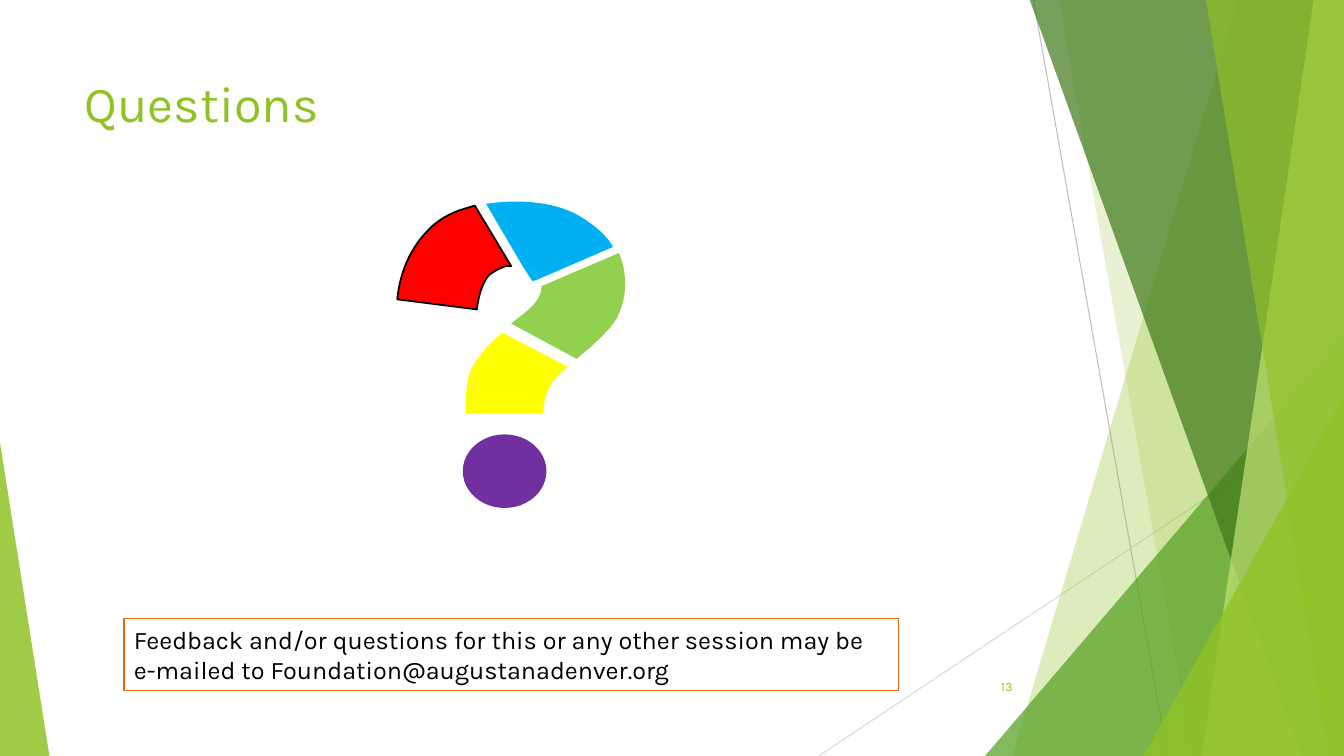
from dataclasses import dataclass

from lxml import etree
from pptx import Presentation
from pptx.dml.color import RGBColor
from pptx.enum.shapes import MSO_CONNECTOR, MSO_SHAPE
from pptx.enum.text import MSO_ANCHOR, MSO_AUTO_SIZE, PP_ALIGN
from pptx.oxml.ns import qn
from pptx.util import Inches, Pt

LINE = MSO_CONNECTOR.STRAIGHT
RECT, OVAL, TRIANGLE = MSO_SHAPE.RECTANGLE, MSO_SHAPE.OVAL, MSO_SHAPE.ISOSCELES_TRIANGLE
TOP, MIDDLE = MSO_ANCHOR.TOP, MSO_ANCHOR.MIDDLE
LEFT, RIGHT = PP_ALIGN.LEFT, PP_ALIGN.RIGHT
GROW = MSO_AUTO_SIZE.SHAPE_TO_FIT_TEXT
W, H = 13.33, 7.5
BAND_TOP = -0.01


@dataclass(frozen=True)
class Theme:
    font: str = "Karla"
    title: int = 36
    body: int = 18
    small: int = 9
    green: str = "90C226"
    mid_green: str = "54A021"
    dark_green: str = "3F7819"
    pale_green: str = "C0E474"
    gray: str = "BFBFBF"
    light_gray: str = "D9D9D9"
    black: str = "000000"
    orange: str = "E76618"
    red: str = "FF0000"
    blue: str = "00B0F0"
    lime: str = "92D050"
    yellow: str = "FFFF00"
    purple: str = "7030A0"


T = Theme()

TITLE = "Questions"
PAGE = "13"
FEEDBACK = ("Feedback and/or questions for this or any other session may be "
            "e-mailed to Foundation@augustanadenver.org")

# start, end, colour
RAYS = [((10.25, 0), (11.58, H), T.gray),
        ((W, 4.03), (8.12, H), T.light_gray)]

# Bands reach the right edge: (top x, bottom x, colour, opacity %)
# Wedges stand on the bottom edge: (left, width, height, apex, colour, opacity %)
DECOR = [
    (12.28, 10.04, T.green, 30),
    (10.5, 11.83, T.green, 20),
    (9.77, 3.56, 4.17, 1, T.mid_green, 72),
    (10.21, 12.91, T.dark_green, 70),
    (13.03, 11.92, T.pale_green, 70),
    (11.96, 13.18, T.green, 65),
    (11.34, 1.99, 3.57, 1, T.green, 80),
    (0, 0.49, 3.11, 0, T.green, 85),
]

# Pieces of the question mark: two numbers are a corner, six are a Bezier curve
MARK = [
    (T.blue, None, [
        (5.19, 2.65), (5.21, 2.65), (5.24, 2.66, 5.27, 2.68, 5.29, 2.7),
        (5.3, 2.71, 5.31, 2.72, 5.32, 2.73), (5.34, 2.77), (5.28, 2.79)]),
    (T.blue, None, [
        (5.11, 2), (5.4, 2, 5.64, 2.06, 5.82, 2.19),
        (5.91, 2.25, 5.99, 2.32, 6.05, 2.4), (6.08, 2.45), (5.34, 2.77),
        (5.32, 2.73), (5.31, 2.72, 5.3, 2.71, 5.29, 2.7),
        (5.27, 2.68, 5.24, 2.66, 5.21, 2.65), (5.19, 2.65), (4.82, 2.02),
        (4.84, 2.02), (4.92, 2.01, 5.01, 2, 5.11, 2)]),
    (T.red, T.black, [
        (4.71, 2.04), (5.07, 2.64), (5.02, 2.64),
        (4.96, 2.66, 4.9, 2.69, 4.85, 2.73), (4.79, 2.8, 4.75, 2.91, 4.73, 3.07),
        (3.94, 2.97), (3.97, 2.68, 4.08, 2.45, 4.26, 2.27),
        (4.35, 2.18, 4.47, 2.11, 4.61, 2.07)]),
    (T.lime, None, [
        (6.14, 2.51), (6.15, 2.54), (6.19, 2.63, 6.2, 2.73, 6.2, 2.83),
        (6.2, 2.95, 6.17, 3.06, 6.11, 3.17), (6.06, 3.25, 5.97, 3.34, 5.85, 3.45),
        (5.72, 3.56), (5.07, 3.21), (5.21, 3.1),
        (5.32, 3.01, 5.37, 2.93, 5.37, 2.85), (5.37, 2.84)]),
    (T.yellow, None, [
        (4.98, 3.3), (5.63, 3.64), (5.61, 3.66),
        (5.53, 3.73, 5.47, 3.79, 5.45, 3.84), (5.41, 3.91, 5.39, 3.99, 5.39, 4.1),
        (4.62, 4.1), (4.62, 4.02), (4.62, 3.89, 4.63, 3.78, 4.66, 3.7),
        (4.69, 3.62, 4.74, 3.55, 4.8, 3.48), (4.83, 3.44, 4.87, 3.4, 4.94, 3.34)]),
]
DOT = (4.59, 4.31, 0.83, 0.73)


def style(sp, fill=None, line=None, width=0.75, opacity=100):
    sp.shadow.inherit = False
    if fill:
        sp.fill.solid()
        sp.fill.fore_color.rgb = RGBColor.from_string(fill)
        if opacity < 100:
            color = sp.fill._xPr.find(qn("a:solidFill"))[0]
            etree.SubElement(color, qn("a:alpha")).set("val", str(opacity * 1000))
    else:
        sp.fill.background()
    if line:
        sp.line.color.rgb = RGBColor.from_string(line)
        sp.line.width = Pt(width)
    else:
        sp.line.fill.background()


def add_preset(shapes, kind, box):
    return shapes.add_shape(kind, *(Inches(v) for v in box))


def add_outline(shapes, outline):
    """Draw the corners as a freeform, then bend the segments that are curves."""
    corners = [(Inches(step[-2]), Inches(step[-1])) for step in outline]
    builder = shapes.build_freeform(*corners[0], scale=1.0)
    builder.add_line_segments(corners[1:], close=True)
    sp = builder.convert_to_shape()
    segments = list(sp._element.spPr.iter(qn("a:lnTo")))
    for segment, step in zip(segments, outline[1:]):
        if len(step) == 6:
            curve = etree.Element(qn("a:cubicBezTo"))
            for x, y in zip(step[::2], step[1::2]):
                pt = etree.SubElement(curve, qn("a:pt"))
                pt.set("x", str(Inches(x) - sp.left))
                pt.set("y", str(Inches(y) - sp.top))
            segment.getparent().replace(segment, curve)
    return sp


def write(sp, text, size, color, align=LEFT, anchor=MIDDLE):
    tf = sp.text_frame
    tf.word_wrap = True
    tf.vertical_anchor = anchor
    p = tf.paragraphs[0]
    p.alignment = align
    r = p.add_run()
    r.text = text
    r.font.name, r.font.size = T.font, Pt(size)
    r.font.color.rgb = RGBColor.from_string(color)


def add_text(shapes, box, *args, **kwargs):
    sp = shapes.add_textbox(*(Inches(v) for v in box))
    write(sp, *args, **kwargs)


def add_decor(shapes):
    for start, end, color in RAYS:
        ray = shapes.add_connector(LINE, *(Inches(v) for v in start + end))
        ray.line.color.rgb = RGBColor.from_string(color)
        ray.line.width = Pt(0.75)
        etree.SubElement(ray._element.spPr, qn("a:effectLst"))
    for *geometry, color, opacity in DECOR:
        if len(geometry) == 2:
            top, bottom = geometry
            sp = add_outline(shapes, [(top, BAND_TOP), (W, BAND_TOP), (W, H), (bottom, H)])
        else:
            left, width, height, apex = geometry
            sp = add_preset(shapes, TRIANGLE, (left, H - height, width, height))
            sp.adjustments[0] = apex
        style(sp, color, opacity=opacity)


def main():
    prs = Presentation()
    prs.slide_width, prs.slide_height = Inches(W), Inches(H)
    shapes = prs.slides.add_slide(prs.slide_layouts[6]).shapes

    add_decor(shapes)
    add_text(shapes, (0.74, 0.67, 9.4, 0.71), TITLE, T.title, T.green, anchor=TOP)
    add_text(shapes, (9.39, 6.61, 0.75, 0.4), PAGE, T.small, T.green, align=RIGHT)

    for fill, line, outline in MARK:
        style(add_outline(shapes, outline), fill, line, width=1.25)
    style(add_preset(shapes, OVAL, DOT), T.purple)

    feedback = add_preset(shapes, RECT, (1.23, 6.14, 7.68, 0.71))
    style(feedback, line=T.orange)
    write(feedback, FEEDBACK, T.body, T.black, anchor=TOP)
    feedback.text_frame.auto_size = GROW

    prs.save("out.pptx")


if __name__ == "__main__":
    main()
